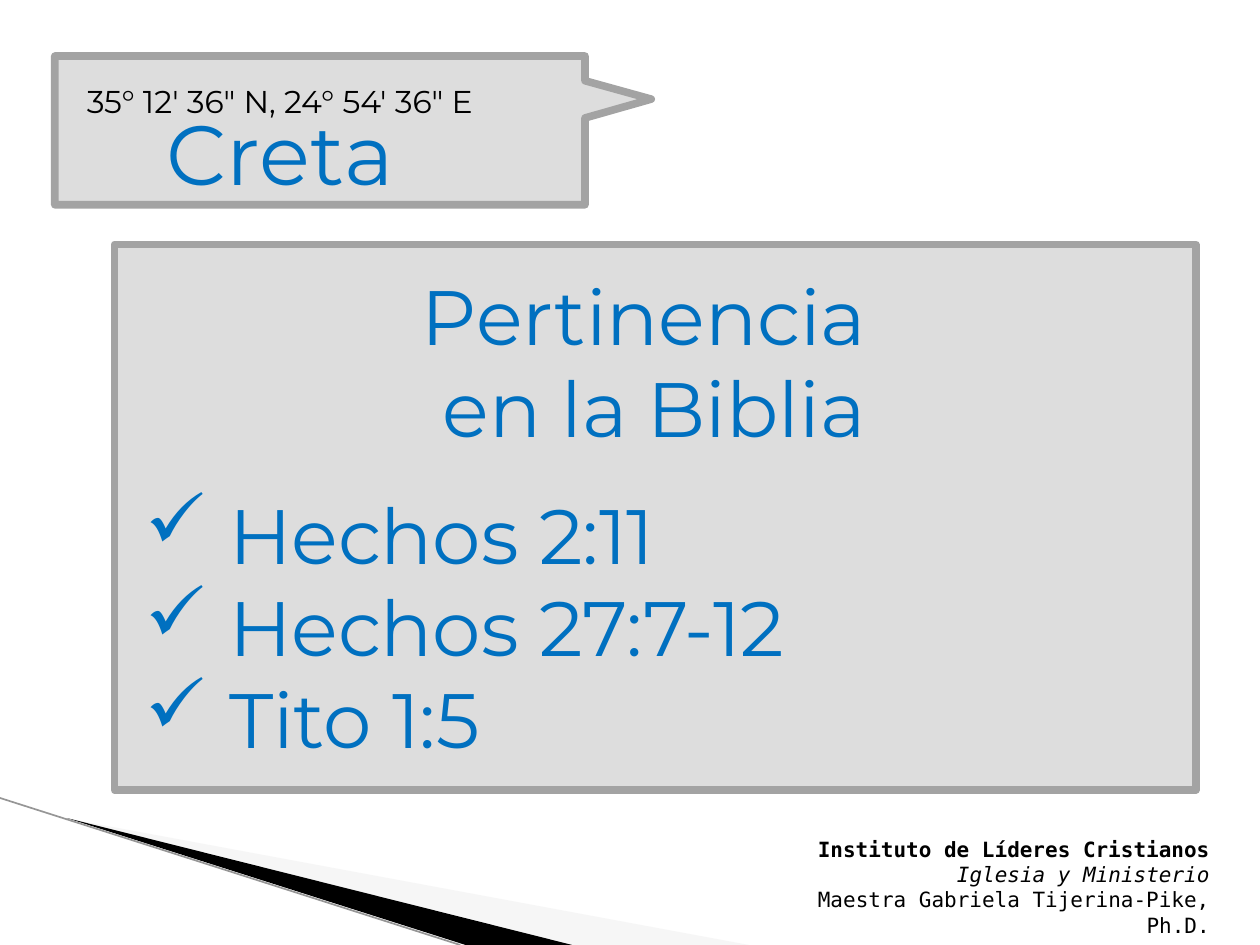
from dataclasses import dataclass

from lxml.etree import SubElement
from pptx import Presentation
from pptx.dml.color import RGBColor
from pptx.enum.shapes import MSO_CONNECTOR, MSO_SHAPE
from pptx.enum.text import PP_ALIGN
from pptx.oxml.ns import qn
from pptx.util import Pt


@dataclass(frozen=True)
class Theme:
    panel: str = "DDDDDD"
    border: str = "A3A3A3"
    accent: str = "0070C0"
    ink: str = "000000"
    mist: str = "EAEAEA"
    edge: str = "969696"
    border_width: float = 4.33
    edge_width: float = 0.95
    place_size: int = 48
    body_size: int = 44
    caption_size: int = 18
    footer_size: int = 12
    face: str = "Montserrat"
    footer_face: str = "DejaVu Sans Mono"


class SlideBuilder:
    def __init__(self, page, theme):
        self.page = page
        self.theme = theme

    def sweep(self, points, color, opacity=None):
        corners = [(Pt(x), Pt(y)) for x, y in points]
        outline = self.page.shapes.build_freeform(*corners[0], scale=1.0)
        outline.add_line_segments(corners[1:], close=True)
        shape = outline.convert_to_shape()
        shape.shadow.inherit = False
        shape.fill.solid()
        shape.fill.fore_color.rgb = RGBColor.from_string(color)
        shape.line.fill.background()
        if opacity is not None:
            tint = shape.fill._xPr.find(qn("a:solidFill"))[0]
            SubElement(tint, qn("a:alpha"), val=str(opacity * 1000))

    def line(self, start, end):
        ends = [Pt(value) for value in (*start, *end)]
        edge = self.page.shapes.add_connector(MSO_CONNECTOR.STRAIGHT, *ends)
        edge.line.color.rgb = RGBColor.from_string(self.theme.edge)
        edge.line.width = Pt(self.theme.edge_width)
        SubElement(edge._element.spPr, qn("a:effectLst"))

    def panel(self, kind, area):
        panel = self.page.shapes.add_shape(kind, *map(Pt, area))
        panel.shadow.inherit = False
        panel.fill.solid()
        panel.fill.fore_color.rgb = RGBColor.from_string(self.theme.panel)
        panel.line.color.rgb = RGBColor.from_string(self.theme.border)
        panel.line.width = Pt(self.theme.border_width)
        return panel

    def text(self, area, lines, size, color, face=None, align=PP_ALIGN.LEFT, wrap=True):
        box = self.page.shapes.add_textbox(*map(Pt, area))
        frame = box.text_frame
        frame.word_wrap = wrap
        frame.text = "\n".join(lines)
        for para in frame.paragraphs:
            para.alignment = align
            para.font.size = Pt(size)
            para.font.name = face or self.theme.face
            para.font.color.rgb = RGBColor.from_string(color)
        return frame.paragraphs

    def check(self, para, indent):
        para.alignment = PP_ALIGN.LEFT
        properties = para._p.get_or_add_pPr()
        properties.set("marL", str(Pt(indent)))
        properties.set("indent", str(-Pt(indent)))
        bullet = SubElement(properties, qn("a:buChar"), char="✓")
        properties.remove(bullet)
        properties.insert_element_before(bullet, "a:tabLst", "a:defRPr", "a:extLst")


def main():
    deck = Presentation()
    deck.slide_width, deck.slide_height = Pt(720), Pt(540)
    page = deck.slides.add_slide(deck.slide_layouts[6])
    theme = Theme()
    builder = SlideBuilder(page, theme)

    builder.sweep([(39.6, 468), (428, 540), (328, 540)], theme.mist, opacity=40)
    builder.sweep([(38.2, 467.5), (327, 540), (266, 540)], theme.ink)
    builder.line((0, 456), (263, 540))

    callout = builder.panel(MSO_SHAPE.RECTANGULAR_CALLOUT, (31.3, 32, 303, 85))
    callout.adjustments[0] = 0.625
    callout.adjustments[1] = -0.21
    builder.text((88, 54.7, 164, 65.5), ["Creta"], theme.place_size, theme.accent)
    builder.text((42.5, 43.2, 281.5, 28.8), ["35° 12′ 36″ N, 24° 54′ 36″ E"],
                 theme.caption_size, theme.ink, wrap=False)

    builder.panel(MSO_SHAPE.RECTANGLE, (65.5, 139.7, 617.8, 311.8))
    heading = ["Pertinencia ", "en la Biblia"]
    verses = ["Hechos 2:11", "Hechos 27:7-12", "Tito 1:5"]
    paras = builder.text((76.3, 149.8, 595.4, 390), heading + verses,
                         theme.body_size, theme.accent, align=PP_ALIGN.CENTER)
    checks = paras[len(heading):]
    for para in checks:
        builder.check(para, 47.5)
    checks[0].space_before = Pt(19.5)

    institute, ministry, _ = builder.text(
        (427.7, 474.5, 270.7, 51),
        ["Instituto de Líderes Cristianos", "Iglesia y Ministerio",
         "Maestra Gabriela Tijerina-Pike, Ph.D."],
        theme.footer_size, theme.ink, theme.footer_face, PP_ALIGN.RIGHT)
    institute.font.bold = True
    ministry.font.italic = True

    deck.save("out.pptx")


if __name__ == "__main__":
    main()
